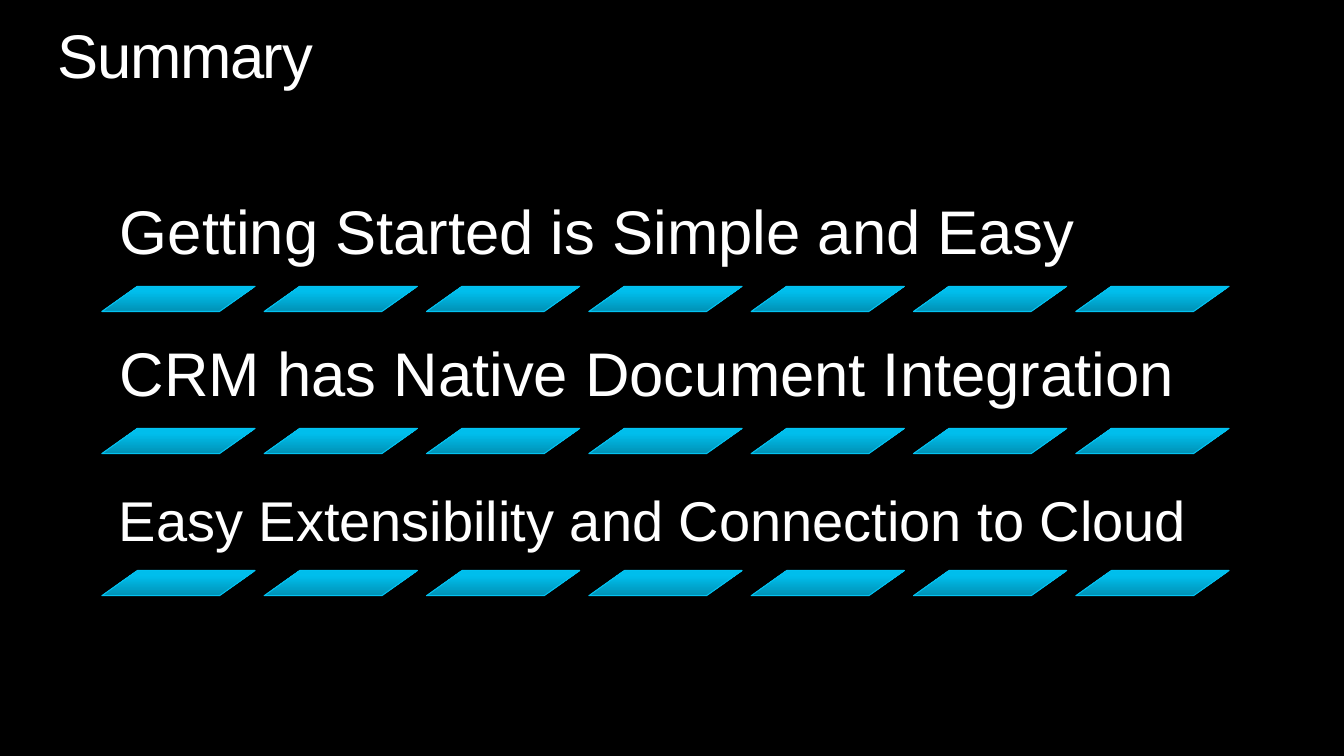
from copy import deepcopy

from pptx import Presentation
from pptx.dml.color import RGBColor
from pptx.enum.shapes import MSO_SHAPE
from pptx.enum.text import MSO_ANCHOR, MSO_AUTO_SIZE, PP_ALIGN
from pptx.oxml.ns import qn
from pptx.util import Inches, Pt

WHITE = "FFFFFF"
GRADIENT = [(0, "0092B6"), (0.8, "00BEEC"), (1, "00BFEE")]
POINTS = [
    ("Getting Started is Simple and Easy", 44, 0.18),
    ("CRM has Native Document Integration", 44, 0.18),
    ("Easy Extensibility and Connection to Cloud", 40, 0.17),
]
LEFT = 1.01
FIRST_TOP = 1.8
ROW_STEP = 1.41
TEXT_HEIGHT = 1.04
DASH_COUNT = 7
DASH_STEP = 1.61


def color(hex_value):
    return RGBColor.from_string(hex_value)


def write_text(shape, text, size=44, inset=0, anchor=MSO_ANCHOR.TOP, spacing=None):
    frame = shape.text_frame
    frame.word_wrap = True
    frame.vertical_anchor = anchor
    frame.margin_left = frame.margin_right = Inches(inset)
    frame.margin_top = frame.margin_bottom = Inches(inset)
    paragraph = frame.paragraphs[0]
    paragraph.alignment = PP_ALIGN.LEFT
    paragraph.line_spacing = 0.9
    run = paragraph.add_run()
    run.text = text
    run.font.name = "Arial"
    run.font.size = Pt(size)
    run.font.color.rgb = color(WHITE)
    if spacing is not None:
        run.font._element.set("spc", str(spacing))


def add_title(slide, text):
    title = slide.shapes.title
    title.left, title.top = Inches(0.57), Inches(0.25)
    title.width, title.height = Inches(12.19), Inches(0.67)
    write_text(title, text, spacing=-100)
    title.text_frame.auto_size = MSO_AUTO_SIZE.SHAPE_TO_FIT_TEXT


def fill_gradient(shape):
    shape.fill.gradient()
    shape.fill.gradient_angle = 90
    stop_list = shape._element.spPr.find(".//" + qn("a:gsLst"))
    stop_list.append(deepcopy(stop_list[-1]))
    for stop, (position, hex_value) in zip(shape.fill.gradient_stops, GRADIENT):
        stop.position = position
        stop.color.rgb = color(hex_value)


def add_dash(slide, left, top):
    dash = slide.shapes.add_shape(
        MSO_SHAPE.PARALLELOGRAM, Inches(left), Inches(top), Inches(1.52), Inches(0.25)
    )
    dash.adjustments[0] = 1.41
    dash.shadow.inherit = False
    fill_gradient(dash)
    dash.line.color.rgb = color("03C2F1")
    dash.line.width = Pt(0.75)


def add_point(slide, top, text, size, inset):
    box = slide.shapes.add_textbox(
        Inches(LEFT), Inches(top), Inches(11.4), Inches(TEXT_HEIGHT)
    )
    write_text(box, text, size=size, inset=inset, anchor=MSO_ANCHOR.BOTTOM)
    for column in range(DASH_COUNT):
        add_dash(slide, LEFT + column * DASH_STEP, top + TEXT_HEIGHT)


def main():
    presentation = Presentation()
    presentation.slide_width = Inches(13.33)
    presentation.slide_height = Inches(7.5)
    slide = presentation.slides.add_slide(presentation.slide_layouts[5])
    slide.background.fill.solid()
    slide.background.fill.fore_color.rgb = color("000000")
    add_title(slide, "Summary")
    for row, (text, size, inset) in enumerate(POINTS):
        add_point(slide, FIRST_TOP + row * ROW_STEP, text, size, inset)
    presentation.save("out.pptx")


if __name__ == "__main__":
    main()
